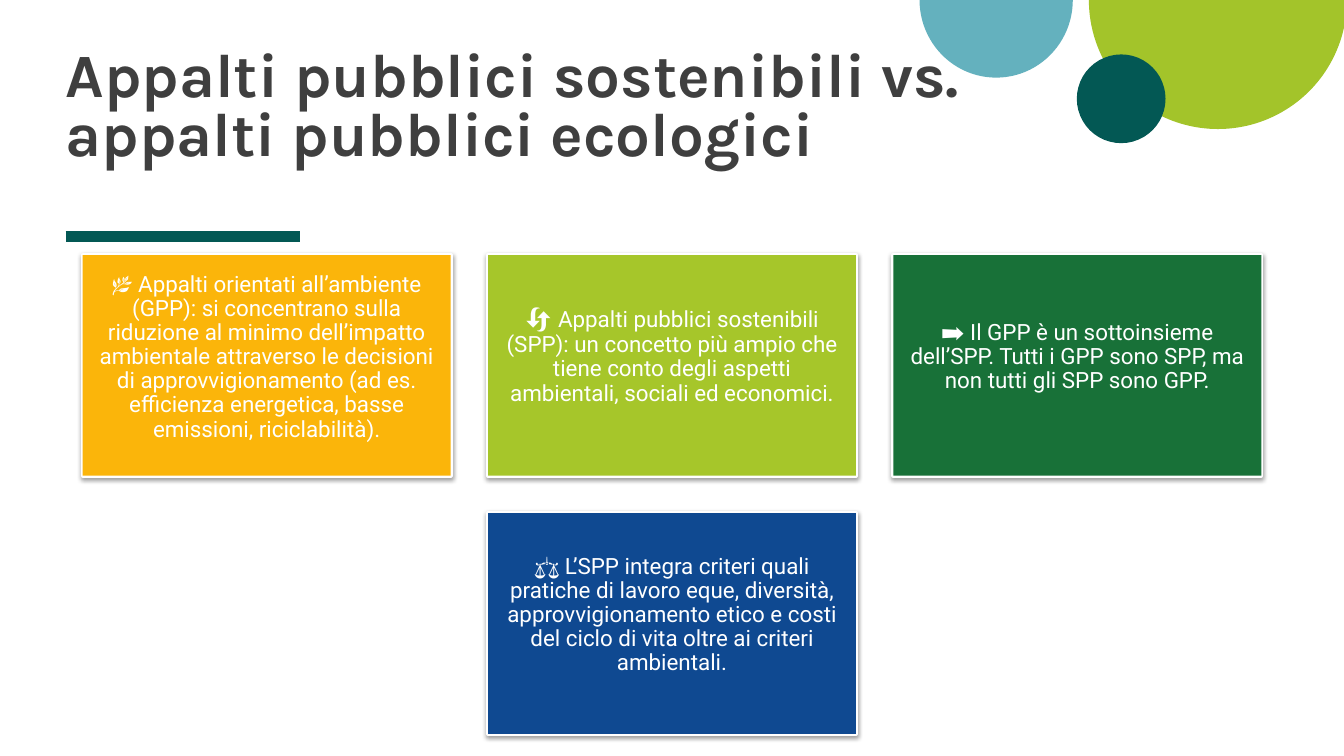
from dataclasses import dataclass
from lxml.etree import SubElement
from pptx import Presentation
from pptx.dml.color import RGBColor
from pptx.enum.shapes import MSO_CONNECTOR, MSO_SHAPE
from pptx.enum.text import MSO_ANCHOR, PP_ALIGN
from pptx.oxml import parse_xml
from pptx.oxml.ns import nsdecls, qn
from pptx.util import Inches, Pt


@dataclass
class Theme:
    dark: str = "3F3F3F"
    white: str = "FFFFFF"
    teal: str = "035854"
    lime: str = "A3C42A"
    sky: str = "64B1BE"
    cards: tuple = (("FAB506", "FBB50A"), ("77DA1C", "A6C62A"),
                    ("30BC5E", "187138"), ("4393A0", "0F4991"))
    head: str = "Karla"
    body: str = "Roboto"
    big: int = 44
    mid: int = 19
    text: int = 16


class Deck:
    def __init__(self, slide, theme):
        self.slide = slide
        self.theme = theme

    def shape(self, kind, box, fill, *angles):
        item = self.slide.shapes.add_shape(kind, *map(Inches, box))
        item.shadow.inherit = False
        item.fill.solid()
        item.fill.fore_color.rgb = RGBColor.from_string(fill)
        item.line.fill.background()
        for i, angle in enumerate(angles):
            item.adjustments[i] = angle
        return item

    def rule(self, start, end, fill, width):
        line = self.slide.shapes.add_connector(
            MSO_CONNECTOR.STRAIGHT, *map(Inches, start + end))
        line.line.color.rgb = RGBColor.from_string(fill)
        line.line.width = Pt(width)
        SubElement(line._element.spPr, qn("a:effectLst"))

    def font(self, font, name, size, fill):
        font.name = name
        font.size = Pt(size)
        font.color.rgb = RGBColor.from_string(fill)

    def inset(self, frame, side, base):
        frame.word_wrap = True
        frame.vertical_anchor = MSO_ANCHOR.MIDDLE
        frame.margin_left = frame.margin_right = frame.margin_top = Inches(side)
        frame.margin_bottom = Inches(base)

    def title(self, box, text):
        frame = self.slide.shapes.add_textbox(*map(Inches, box)).text_frame
        self.inset(frame, 0, 0)
        para = frame.paragraphs[0]
        para.text = text
        para.line_spacing = 0.8
        self.font(para.font, self.theme.head, self.theme.big, self.theme.dark)
        para.font.bold = True

    def card(self, box, fills, icon, text, size, base):
        back = self.shape(MSO_SHAPE.RECTANGLE, box, fills[0])
        back.line.color.rgb = RGBColor.from_string(self.theme.white)
        back.line.width = Pt(3)
        glow = back._element.spPr.find(qn("a:effectLst"))
        glow.append(parse_xml(
            f'<a:outerShdw {nsdecls("a")} blurRad="{Pt(3.1)}" dist="{Pt(1.6)}" '
            'dir="5400000" rotWithShape="0"><a:srgbClr val="000000">'
            '<a:alpha val="37000"/></a:srgbClr></a:outerShdw>'))
        frame = self.shape(MSO_SHAPE.RECTANGLE, box, fills[1]).text_frame
        self.inset(frame, 0.08, base)
        para = frame.paragraphs[0]
        para.alignment = PP_ALIGN.CENTER
        para.line_spacing = 0.9
        for part, points in ((icon + " ", size), (text, self.theme.text)):
            run = para.add_run()
            run.text = part
            self.font(run.font, self.theme.body, points, self.theme.white)


def main():
    show = Presentation()
    show.slide_width = Inches(13.33)
    show.slide_height = Inches(7.5)
    look = Theme()
    deck = Deck(show.slides.add_slide(show.slide_layouts[6]), look)

    deck.rule((0.65, 2.35), (2.98, 2.35), look.teal, 8)
    deck.shape(MSO_SHAPE.PIE, (10.8, -1.28, 2.56, 2.56), look.lime, 0, 107.96)
    deck.shape(MSO_SHAPE.PIE, (9.12, -0.77, 1.52, 1.54), look.sky, 0, 108.52)
    deck.shape(MSO_SHAPE.OVAL, (10.68, 0.54, 0.88, 0.88), look.teal)
    deck.title((0.65, 0.22, 9.28, 1.72),
               "Appalti pubblici sostenibili vs. appalti pubblici ecologici")

    cards = (
        (0, 0, "🌿", "Appalti orientati all’ambiente (GPP): si concentrano sulla "
         "riduzione al minimo dell’impatto ambientale attraverso le decisioni di "
         "approvvigionamento (ad es. efficienza energetica, basse emissioni, "
         "riciclabilità).", look.text, 0.24),
        (1, 0, "🔄", "Appalti pubblici sostenibili (SPP): un concetto più ampio che "
         "tiene conto degli aspetti ambientali, sociali ed economici.",
         look.mid, 0.28),
        (2, 0, "➡️", "Il GPP è un sottoinsieme dell’SPP. Tutti i GPP sono SPP, ma "
         "non tutti gli SPP sono GPP.", look.text, 0.24),
        (1, 1, "⚖️", "L’SPP integra criteri quali pratiche di lavoro eque, "
         "diversità, approvvigionamento etico e costi del ciclo di vita oltre ai "
         "criteri ambientali.", look.text, 0.24),
    )
    for fills, (col, row, *rest) in zip(look.cards, cards):
        box = (0.82 + 4.02 * col, 2.53 + 2.56 * row, 3.65, 2.19)
        deck.card(box, fills, *rest)

    show.save("out.pptx")


if __name__ == "__main__":
    main()
